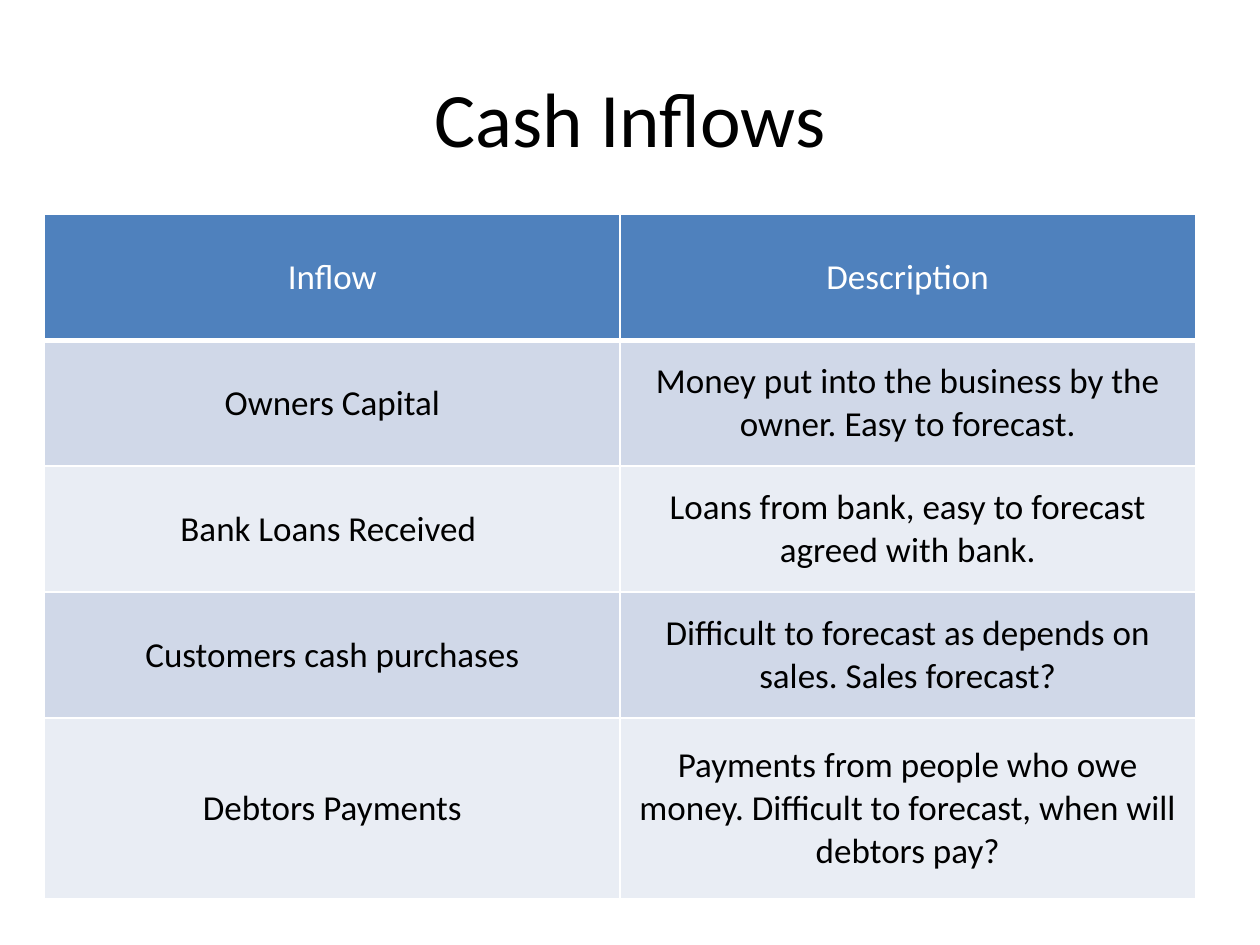
"""Build the Cash Inflows slide: a title above a two-column table."""
from dataclasses import dataclass

from lxml import etree
from pptx import Presentation
from pptx.dml.color import RGBColor
from pptx.enum import text
from pptx.oxml import ns
from pptx.util import Pt


@dataclass(frozen=True)
class Theme:
    """Colours, font and type sizes of the slide."""

    font: str = "Calibri"
    title_size: int = 44
    cell_size: int = 20
    ink: str = "000000"
    paper: str = "FFFFFF"
    header: str = "4F81BD"
    bands: tuple = ("D0D8E8", "E9EDF4")


THEME = Theme()
COLUMN_WIDTH = 328.8
ROW_HEIGHTS = (72, 72, 72, 72, 103)
ROWS = (
    ("Inflow", "Description"),
    ("Owners Capital", "Money put into the business by the owner. Easy to forecast."),
    ("Bank Loans Received ", "Loans from bank, easy to forecast agreed with bank."),
    ("Customers cash purchases", "Difficult to forecast as depends on sales. Sales forecast?"),
    (
        "Debtors Payments",
        "Payments from people who owe money. Difficult to forecast, when will debtors pay?",
    ),
)


def write_centred(frame, words, size, color):
    """Write one centred run into a text frame."""
    paragraph = frame.paragraphs[0]
    paragraph.alignment = text.PP_ALIGN.CENTER
    run = paragraph.add_run()
    run.text = words
    run.font.name = THEME.font
    run.font.size = Pt(size)
    run.font.bold = False
    run.font.color.rgb = RGBColor.from_string(color)


def set_borders(cell, bottom_width):
    """Give a cell white borders, with its own width at the bottom."""
    properties = cell._tc.get_or_add_tcPr()
    widths = {"lnL": 1, "lnR": 1, "lnT": 1, "lnB": bottom_width}
    for position, (tag, width) in enumerate(widths.items()):
        line = etree.Element(ns.qn(f"a:{tag}"), w=str(Pt(width)))
        fill = etree.SubElement(line, ns.qn("a:solidFill"))
        etree.SubElement(fill, ns.qn("a:srgbClr"), val=THEME.paper)
        properties.insert(position, line)


def add_title(slide, words):
    """Place and fill the title placeholder."""
    title = slide.shapes.title
    title.left, title.top, title.width, title.height = Pt(36), Pt(21.6), Pt(648), Pt(90)
    title.text_frame.vertical_anchor = text.MSO_ANCHOR.MIDDLE
    write_centred(title.text_frame, words, THEME.title_size, THEME.ink)


def format_cell(cell, words, row_index):
    """Fill, border and write a cell according to its row."""
    is_header = row_index == 0
    background = THEME.header if is_header else THEME.bands[(row_index - 1) % 2]
    cell.fill.solid()
    cell.fill.fore_color.rgb = RGBColor.from_string(background)
    cell.vertical_anchor = text.MSO_ANCHOR.MIDDLE
    set_borders(cell, 3 if is_header else 1)
    write_centred(cell.text_frame, words, THEME.cell_size, THEME.paper if is_header else THEME.ink)


def add_inflow_table(slide):
    """Add the table of inflows and their descriptions."""
    table = slide.shapes.add_table(
        len(ROWS), 2, Pt(25.5), Pt(122.4), Pt(2 * COLUMN_WIDTH), Pt(sum(ROW_HEIGHTS))
    ).table
    for column in table.columns:
        column.width = Pt(COLUMN_WIDTH)
    for row_index, (height, row) in enumerate(zip(ROW_HEIGHTS, ROWS)):
        table.rows[row_index].height = Pt(height)
        for column_index, words in enumerate(row):
            format_cell(table.cell(row_index, column_index), words, row_index)


def main():
    """Create and save the presentation."""
    presentation = Presentation()
    presentation.slide_width, presentation.slide_height = Pt(720), Pt(540)
    slide = presentation.slides.add_slide(presentation.slide_layouts.get_by_name("Title Only"))
    add_title(slide, "Cash Inflows")
    add_inflow_table(slide)
    presentation.save("out.pptx")


if __name__ == "__main__":
    main()
